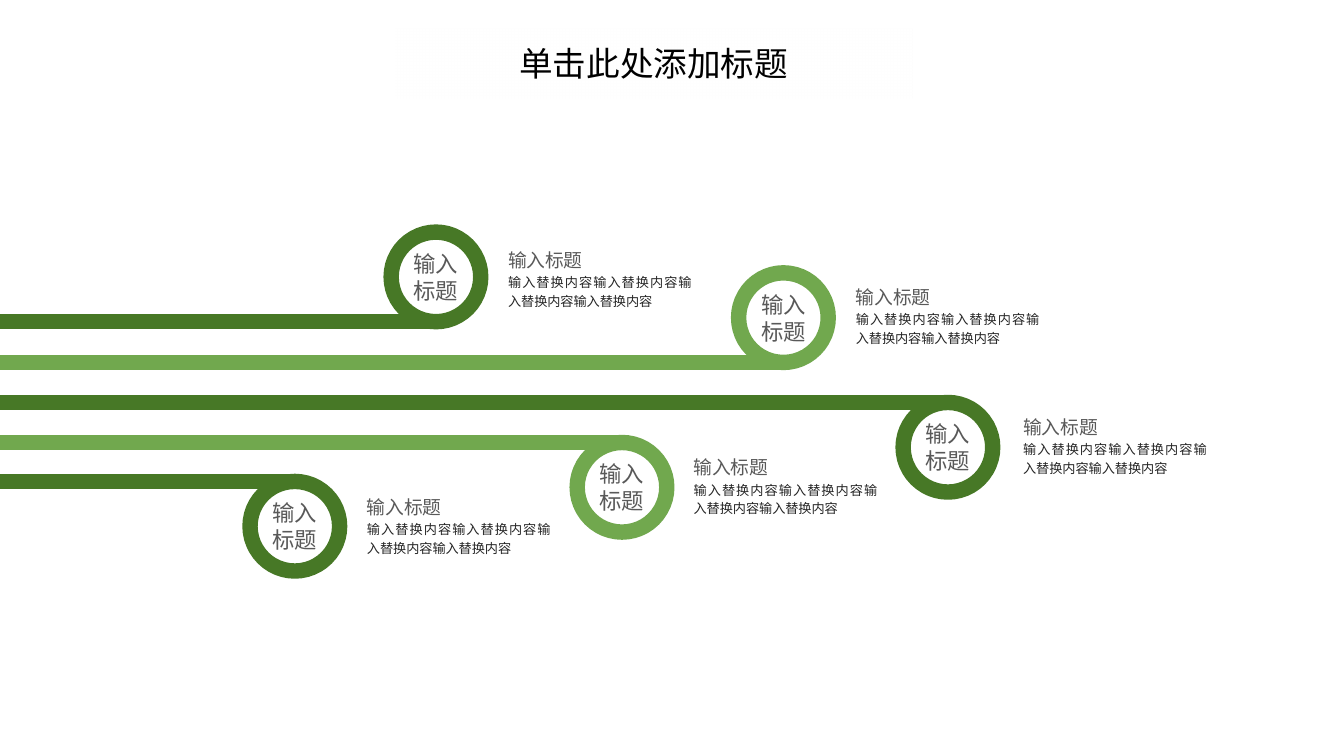
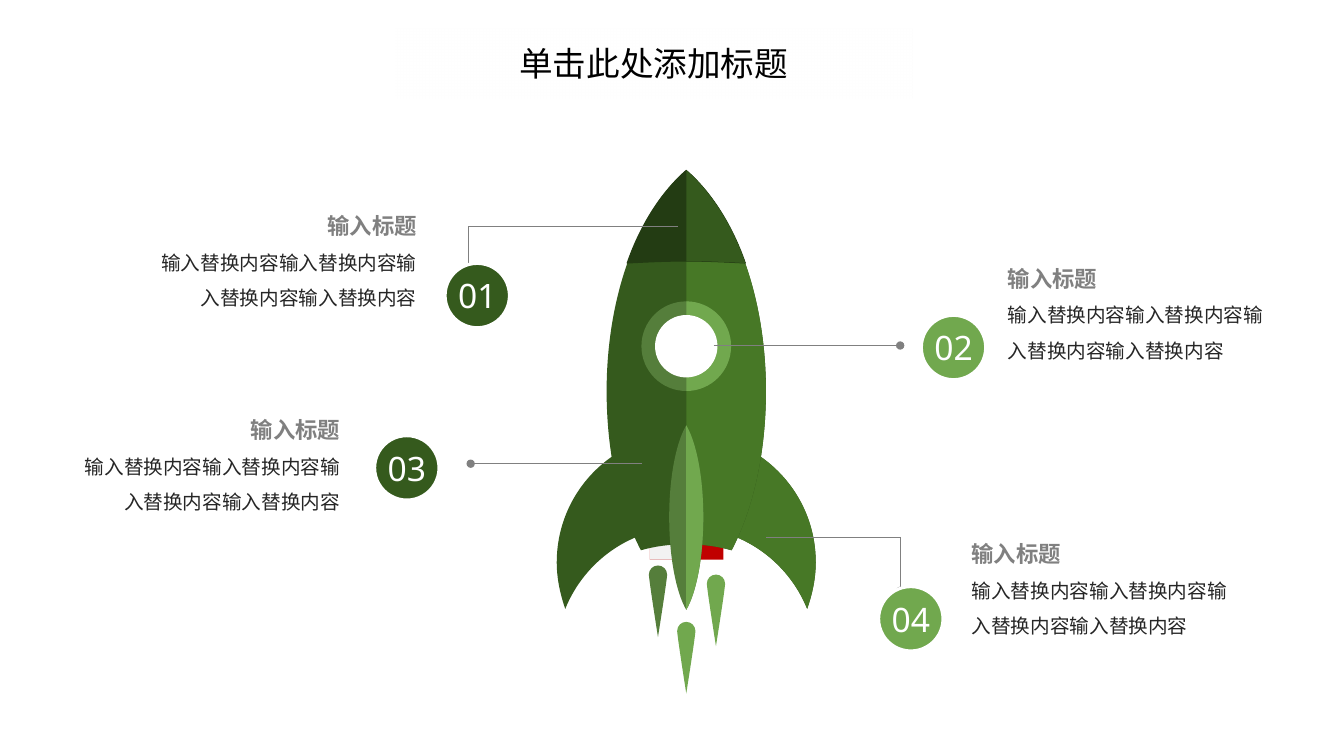
from lxml import etree
from pptx import Presentation
from pptx.dml.color import RGBColor
from pptx.enum.shapes import MSO_CONNECTOR as CONN, MSO_SHAPE as SHAPE
from pptx.enum.text import MSO_ANCHOR as ANCHOR, MSO_AUTO_SIZE as AUTO, PP_ALIGN as ALIGN
from pptx.oxml.ns import qn
from pptx.util import Pt

FONT = "Noto Sans"
BLACK = RGBColor(0x00, 0x00, 0x00)
WHITE = RGBColor(0xFF, 0xFF, 0xFF)
INK = RGBColor(0x26, 0x26, 0x26)
DARK_GREY = RGBColor(0x59, 0x59, 0x59)
GREY = RGBColor(0x80, 0x80, 0x80)
PALE_GREY = RGBColor(0xF2, 0xF2, 0xF2)
RED = RGBColor(0xC0, 0x00, 0x00)
NIGHT = RGBColor(0x23, 0x3C, 0x13)
FOREST = RGBColor(0x35, 0x5A, 0x1D)
GREEN = RGBColor(0x47, 0x78, 0x26)
MOSS = RGBColor(0x55, 0x7E, 0x3B)
LEAF = RGBColor(0x71, 0xA8, 0x4E)

TITLE = "单击此处添加标题"
HEADING = "输入标题"
BODY = "输入替换内容" * 4
RING = 64
BADGE = 46
BODY_WIDTH = 203
HEADING_WIDTH = 80.6
AXIS = 490.2

RINGS = [
    (279.4, 165.8, GREEN, "bottom", 362.9, 174.4),
    (527.6, 194.9, LEAF, "bottom", 611.3, 200.9),
    (412.3, 316.1, LEAF, "top", 495.4, 322.6),
    (645.1, 287.5, GREEN, "top", 730.8, 293.8),
    (178.6, 343.9, GREEN, "top", 262.1, 350.6),
]

CALLOUTS = [
    ("01", 317.9, 188.1, FOREST, [(484.2, 161.6), (334.8, 161.6), (334.8, 200)],
     101.8, 148.3, ALIGN.RIGHT),
    ("02", 658.1, 225.2, LEAF, [(509.8, 246.8), (643, 246.8)],
     712.8, 185.8, ALIGN.LEFT),
    ("03", 267.6, 311.2, FOREST, [(458.6, 331.2), (336.2, 331.2)],
     47.1, 293.8, ALIGN.RIGHT),
    ("04", 627.6, 419, LEAF, [(547.5, 383.5), (643, 383.5), (643, 422)],
     686.9, 382.5, ALIGN.LEFT),
]

FLAME = [(0, 0), (3.6, 0), (6.5, 2.9), (6.5, 6.5), (6.5, 10.1), (0, 51.1), (0, 51.1)]
FINS = [(0, 309.6), (51.1, 309.6), (92.5, 350.6), (92.5, 401.8),
        (92.5, 413.3), (90, 424.8), (86.4, 434.9),
        (72.7, 401), (39.6, 376.6), (0, 376.6)]
HULL = [(0, 121.7), (33.8, 150.5), (56.9, 210.2), (56.9, 279.4),
        (56.9, 322.6), (48.2, 362.9), (32.4, 393.1),
        (22.3, 390.2), (11.5, 388.8), (0, 388.8)]
NOSE = [(0, 121.7), (17.3, 136.8), (32.4, 159.8), (42.2, 187.9),
        (28.8, 187.2), (14.4, 186.5), (0, 186.5)]
KEEL = [(0, 303.8), (7.2, 316.1), (12.2, 340.6), (12.2, 369.4),
        (12.2, 398.2), (7.2, 423.4), (0, 435.6)]
WINDOW = [(0, 215.3), (17.7, 215.3), (32, 229.6), (32, 247.3),
          (32, 265), (17.7, 279.3), (0, 279.3)]


def paint(sp, fill, line=None, width=0.75):
    sp.shadow.inherit = False
    sp.fill.solid()
    sp.fill.fore_color.rgb = fill
    if line is None:
        sp.line.fill.background()
    else:
        sp.line.color.rgb = line
        sp.line.width = Pt(width)


def write(tf, text, size, color, align, spacing=None, bold=None):
    p = tf.paragraphs[0]
    p.text = text
    p.alignment = align
    if spacing:
        p.line_spacing = spacing
    p.font.name = FONT
    p.font.size = Pt(size)
    p.font.bold = bold
    p.font.color.rgb = color


def clear_margins(tf):
    tf.margin_left = tf.margin_top = tf.margin_right = tf.margin_bottom = 0


def add_preset(shapes, kind, x, y, w, h, fill, line=None, width=0.75):
    sp = shapes.add_shape(kind, Pt(x), Pt(y), Pt(w), Pt(h))
    paint(sp, fill, line, width)
    return sp


def add_disc(shapes, x, y, size, fill, line, width, text, font_size, color, wrap):
    sp = add_preset(shapes, SHAPE.OVAL, x, y, size, size, fill, line, width)
    tf = sp.text_frame
    clear_margins(tf)
    tf.word_wrap = wrap
    tf.vertical_anchor = ANCHOR.MIDDLE
    write(tf, text, font_size, color, ALIGN.CENTER)


def add_text(shapes, x, y, w, h, text, size, color, align,
             spacing=None, bold=None, margins=True, wrap=True):
    tf = shapes.add_textbox(Pt(x), Pt(y), Pt(w), Pt(h)).text_frame
    tf.word_wrap = wrap
    tf.auto_size = AUTO.SHAPE_TO_FIT_TEXT
    if not margins:
        clear_margins(tf)
    write(tf, text, size, color, align, spacing, bold)


def add_line(shapes, start, end, color, width, dot=False):
    cn = shapes.add_connector(CONN.STRAIGHT, *map(Pt, start + end))
    cn.line.color.rgb = color
    cn.line.width = Pt(width)
    if dot:
        etree.SubElement(cn._element.spPr.find(qn("a:ln")), qn("a:tailEnd"), type="oval")
    etree.SubElement(cn._element.spPr, qn("a:effectLst"))


def bend(sp):
    corners = list(sp._element.iter(qn("a:lnTo")))
    for i in range(0, len(corners) - 2, 3):
        curve = etree.Element(qn("a:cubicBezTo"))
        corners[i].addprevious(curve)
        for corner in corners[i:i + 3]:
            curve.append(corner[0])
            corner.getparent().remove(corner)


def add_outline(shapes, points, x, y, fill, line=None):
    placed = [(Pt(x + dx), Pt(y + dy)) for dx, dy in points]
    builder = shapes.build_freeform(*placed[0])
    builder.add_line_segments(placed[1:], close=True)
    sp = builder.convert_to_shape()
    bend(sp)
    paint(sp, fill, line)


def add_symmetric(shapes, profile, fill, right_fill=None, x=AXIS, y=0, line=None):
    left = [(-dx, dy) for dx, dy in reversed(profile[:-1])]
    add_outline(shapes, profile + left, x, y, fill, line)
    if right_fill is not None:
        add_outline(shapes, profile, x, y, right_fill)


def fade_sides(sp):
    sp.fill.gradient()
    sp.fill.gradient_angle = 0
    stops = sp._element.spPr.find(qn("a:gradFill")).find(qn("a:gsLst"))
    for stop in list(stops):
        stops.remove(stop)
    for pos, alpha in ((0, 0), (56000, 100000), (100000, 0)):
        stop = etree.SubElement(stops, qn("a:gs"), pos=str(pos))
        color = etree.SubElement(stop, qn("a:srgbClr"), val=str(WHITE))
        etree.SubElement(color, qn("a:alpha"), val=str(alpha))


def add_banner(slide):
    sp = add_preset(slide.shapes, SHAPE.RECTANGLE, 282.2, 20.2, 369.4, 50.4, WHITE)
    fade_sides(sp)
    sp.text_frame.vertical_anchor = ANCHOR.MIDDLE
    write(sp.text_frame, TITLE, 24, BLACK, ALIGN.CENTER)
    slide.slide_layout.shapes._spTree.append(sp._element)


def add_ring(shapes, x, y, color, side, text_x, text_y):
    add_disc(shapes, x, y, RING, WHITE, color, 11, HEADING, 16, DARK_GREY, True)
    line_y = y + RING if side == "bottom" else y
    add_line(shapes, (x + RING / 2, line_y), (0, line_y), color, 11)
    add_text(shapes, text_x, text_y + 19.4, 131, 27.4, BODY, 9.33, INK,
             ALIGN.JUSTIFY, 1.2, margins=False)
    add_text(shapes, text_x, text_y, 101.5, 18, HEADING, 13.33, DARK_GREY,
             ALIGN.JUSTIFY, 1.2, margins=False)


def add_rocket(slide_shapes):
    shapes = slide_shapes.add_group_shape().shapes
    for x, y, color in ((470, 403.9, MOSS), (AXIS, 444.2, LEAF), (511.4, 410.4, LEAF)):
        add_symmetric(shapes, FLAME, color, x=x, y=y)
    for width, color in ((52.6, RED), (26.6, PALE_GREY)):
        add_preset(shapes, SHAPE.RECTANGLE, 464.2, 382.5, width, 17.3, color)
    add_symmetric(shapes, FINS, FOREST, GREEN)
    add_symmetric(shapes, HULL, FOREST, GREEN)
    add_symmetric(shapes, NOSE, NIGHT, FOREST, line=NIGHT)
    add_symmetric(shapes, KEEL, MOSS, LEAF)
    add_symmetric(shapes, WINDOW, MOSS, LEAF)
    add_preset(shapes, SHAPE.OVAL, AXIS - 22.3, 225, 44.6, 44.6, WHITE)


def add_callout(shapes, number, x, y, color, route, text_x, text_y, align):
    for start, end in zip(route, route[1:]):
        add_line(shapes, start, end, GREY, 0.5, dot=end == route[-1])
    add_disc(shapes, x, y, BADGE, color, WHITE, 2.25, number, 24, WHITE, False)
    add_text(shapes, text_x, text_y + 18.9, BODY_WIDTH, 58.3, BODY, 14, INK, align, 1.5)
    indent = BODY_WIDTH - HEADING_WIDTH if align == ALIGN.RIGHT else 0
    add_text(shapes, text_x + indent, text_y, HEADING_WIDTH, 26.6, HEADING, 16, GREY,
             align, bold=True, wrap=False)


def main():
    prs = Presentation()
    prs.slide_width, prs.slide_height = Pt(960), Pt(540)
    blank = prs.slide_layouts[6]
    trails = prs.slides.add_slide(blank)
    add_banner(trails)
    for ring in RINGS:
        add_ring(trails.shapes, *ring)
    launch = prs.slides.add_slide(blank)
    add_rocket(launch.shapes)
    for callout in CALLOUTS:
        add_callout(launch.shapes, *callout)
    prs.save("out.pptx")


if __name__ == "__main__":
    main()
